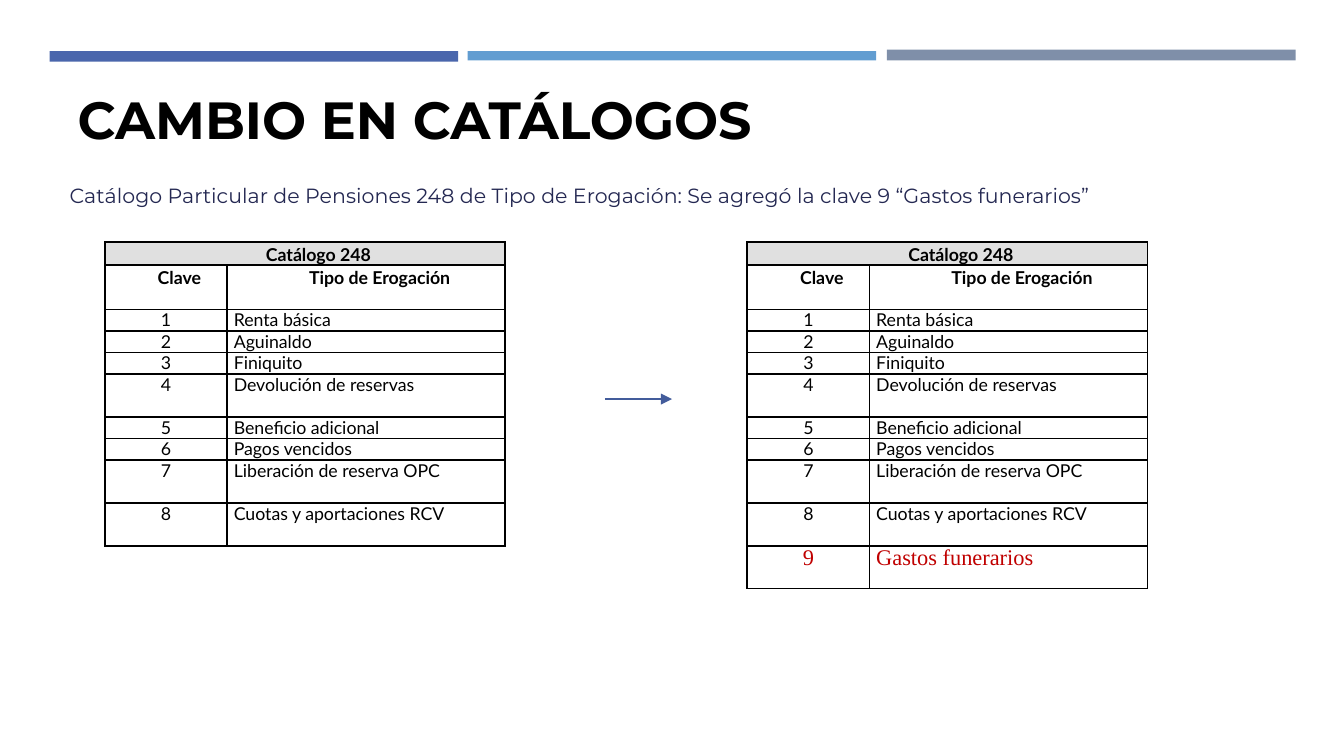
from dataclasses import dataclass

from lxml import etree
from pptx import Presentation, util as u
from pptx.dml.color import RGBColor
from pptx.enum import shapes, text
from pptx.oxml import ns

Inches, Pt = u.Inches, u.Pt
ALIGN = text.PP_ALIGN

BLACK = RGBColor(0x00, 0x00, 0x00)
NAVY = RGBColor(0x24, 0x28, 0x52)
INDIGO = RGBColor(0x4A, 0x66, 0xAC)
SKY = RGBColor(0x62, 0x9D, 0xD1)
SLATE = RGBColor(0x7F, 0x8F, 0xA9)
ARROW_BLUE = RGBColor(0x43, 0x5C, 0x9B)
HEADER_GREY = RGBColor(0xE0, 0xE0, 0xE0)
RED = RGBColor(0xC0, 0x00, 0x00)


@dataclass(frozen=True)
class Style:
    font: str
    size: float
    color: RGBColor
    bold: bool = False


@dataclass(frozen=True)
class Bar:
    left: float
    top: float
    height: float
    color: RGBColor


@dataclass(frozen=True)
class Entry:
    label: str
    height: float = 0.16
    align: ALIGN = ALIGN.LEFT
    highlighted: bool = False


@dataclass(frozen=True)
class Catalog:
    left: float
    entries: list[Entry]


TITLE = Style("Montserrat", 28, BLACK, True)
SUBTITLE = Style("Montserrat", 11, NAVY)
HEADING = Style("Lato", 9.5, BLACK, True)
BODY = Style("Lato", 9.5, BLACK)
ADDED = Style("Times New Roman", 12, RED)

BARS = [
    Bar(0.37, 0.38, 0.08, INDIGO),
    Bar(6.6, 0.37, 0.08, SLATE),
    Bar(3.48, 0.38, 0.07, SKY),
]
ENTRIES = [
    Entry("Renta básica"),
    Entry("Aguinaldo"),
    Entry("Finiquito"),
    Entry("Devolución de reservas", 0.32),
    Entry("Beneficio adicional"),
    Entry("Pagos vencidos"),
    Entry("Liberación de reserva OPC", 0.32, ALIGN.JUSTIFY),
    Entry("Cuotas y aportaciones RCV", 0.32, ALIGN.JUSTIFY),
]
NEW_ENTRY = Entry("Gastos funerarios", 0.32, ALIGN.JUSTIFY, True)
CATALOGS = [Catalog(0.78, ENTRIES), Catalog(5.56, ENTRIES + [NEW_ENTRY])]
COLUMN_WIDTHS = [0.91, 2.07]
HEADER_HEIGHTS = [0.16, 0.33]


def write(para, words: str, style: Style) -> None:
    para.add_run().text = words
    para.font.name = style.font
    para.font.size = Pt(style.size)
    para.font.bold = style.bold
    para.font.color.rgb = style.color


def add_text(page, left: float, top: float, width: float, height: float,
             words: str, style: Style, margin: float = 0) -> None:
    box = page.shapes.add_textbox(Inches(left), Inches(top), Inches(width), Inches(height))
    frame = box.text_frame
    frame.word_wrap = True
    frame.margin_left = frame.margin_right = Inches(0.1)
    frame.margin_top = frame.margin_bottom = Inches(0.1)
    para = frame.paragraphs[0]
    write(para, words, style)
    para._p.get_or_add_pPr().set("marL", str(Inches(margin)))


def add_bar(page, bar: Bar) -> None:
    box = page.shapes.add_shape(shapes.MSO_SHAPE.RECTANGLE, Inches(bar.left),
                                Inches(bar.top), Inches(3.04), Inches(bar.height))
    box.shadow.inherit = False
    box.fill.solid()
    box.fill.fore_color.rgb = bar.color
    box.line.fill.background()


def add_arrow(page, left: float, right: float, y: float) -> None:
    arrow = page.shapes.add_connector(shapes.MSO_CONNECTOR.STRAIGHT, Inches(left),
                                      Inches(y), Inches(right), Inches(y))
    arrow.line.color.rgb = ARROW_BLUE
    arrow.line.width = Pt(1)
    etree.SubElement(arrow.line._get_or_add_ln(), ns.qn("a:tailEnd"), type="triangle")
    etree.SubElement(arrow._element.spPr, ns.qn("a:effectLst"))


def add_borders(cell) -> None:
    properties = cell._tc.get_or_add_tcPr()
    for side in ("lnL", "lnR", "lnT", "lnB"):
        line = etree.SubElement(properties, ns.qn(f"a:{side}"), w=str(Pt(1)))
        fill = etree.SubElement(line, ns.qn("a:solidFill"))
        etree.SubElement(fill, ns.qn("a:srgbClr"), val=str(BLACK))


def fill_cell(cell, words: str, style: Style, align: ALIGN) -> None:
    para = cell.text_frame.paragraphs[0]
    write(para, words, style)
    para.alignment = align
    if style is HEADING:
        para.line_spacing = Pt(12.4)
        para.space_after = Pt(5)
        para._p.get_or_add_pPr().set("indent", str(Inches(0.2)))


def add_catalog(page, catalog: Catalog) -> None:
    heights = HEADER_HEIGHTS + [entry.height for entry in catalog.entries]
    table = page.shapes.add_table(
        len(heights), len(COLUMN_WIDTHS), Inches(catalog.left), Inches(1.8),
        Inches(sum(COLUMN_WIDTHS)), Inches(sum(heights))).table
    table.first_row = table.horz_banding = False
    for column, width in zip(table.columns, COLUMN_WIDTHS):
        column.width = Inches(width)
    for row, height in zip(table.rows, heights):
        row.height = Inches(height)
        for cell in row.cells:
            cell.margin_left = cell.margin_right = Inches(0.05)
            cell.margin_top = cell.margin_bottom = 0
            add_borders(cell)
            cell.fill.background()

    # Headings
    heading = table.cell(0, 0)
    heading.merge(table.cell(0, 1))
    heading.fill.solid()
    heading.fill.fore_color.rgb = HEADER_GREY
    fill_cell(heading, "Catálogo 248", HEADING, ALIGN.CENTER)
    for column, words in enumerate(("Clave", "Tipo de Erogación")):
        fill_cell(table.cell(1, column), words, HEADING, ALIGN.CENTER)

    # Numbered entries
    for key, entry in enumerate(catalog.entries, start=1):
        style = ADDED if entry.highlighted else BODY
        row = key + len(HEADER_HEIGHTS) - 1
        fill_cell(table.cell(row, 0), str(key), style, ALIGN.CENTER)
        fill_cell(table.cell(row, 1), entry.label, style, entry.align)


def main() -> None:
    deck = Presentation()
    deck.slide_width, deck.slide_height = Inches(10), Inches(10 * 9 / 16)
    page = deck.slides.add_slide(deck.slide_layouts[6])

    # Top bars
    for bar in BARS:
        add_bar(page, bar)

    # Title and subtitle
    add_text(page, 0.48, 0.55, 9.16, 0.97, "CAMBIO EN CATÁLOGOS", TITLE)
    add_text(page, 0.3, 1.27, 8.96, 0.86,
             "Catálogo Particular de Pensiones 248 de Tipo de Erogación: "
             "Se agregó la clave 9 “Gastos funerarios”", SUBTITLE, margin=0.12)

    # Catalogs before and after the change
    add_arrow(page, 4.5, 5, 2.97)
    for catalog in CATALOGS:
        add_catalog(page, catalog)

    deck.save("out.pptx")


if __name__ == "__main__":
    main()
